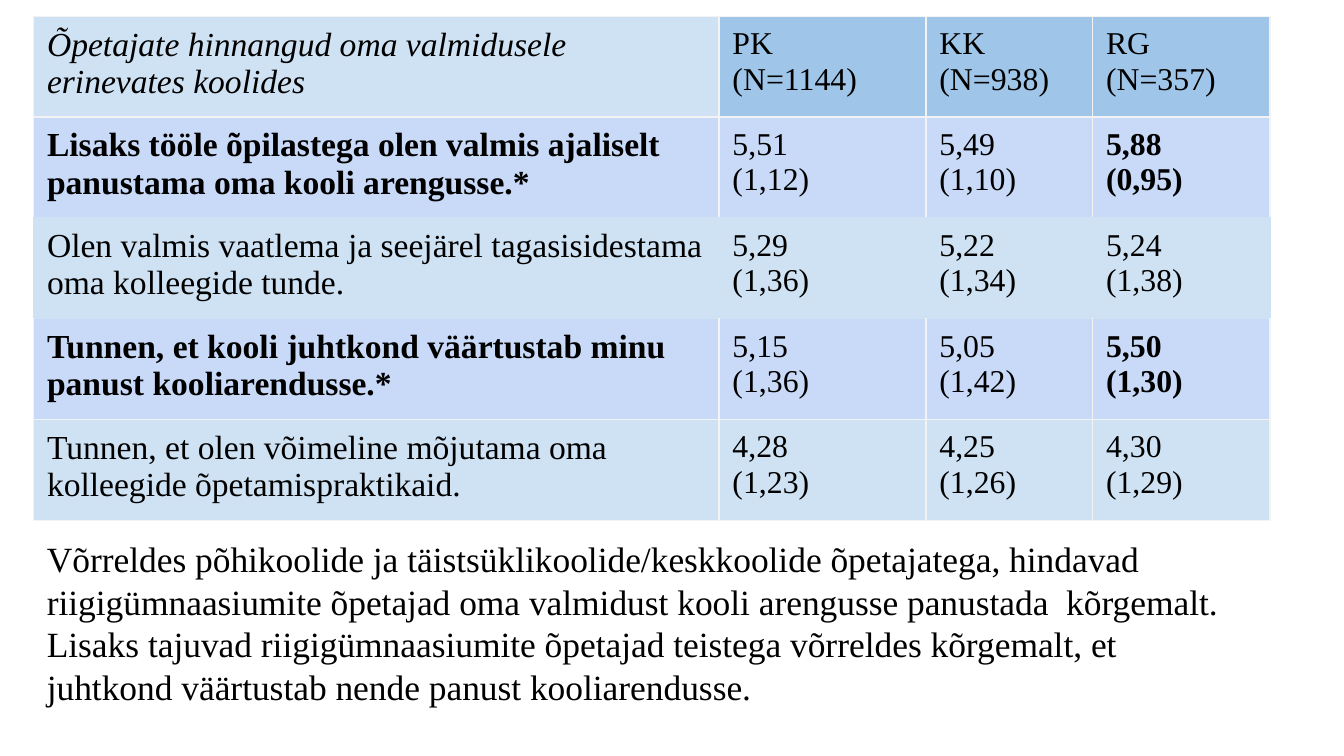
from dataclasses import dataclass

import pptx
import pptx.util
import pptx.dml.color
import pptx.oxml
import pptx.oxml.ns


@dataclass(frozen=True)
class Theme:
    """Colours, font and type sizes of the slide."""
    font: str = "Times New Roman"
    ink: str = "000000"
    paper: str = "FFFFFF"
    head: str = "9FC5E8"
    pale: str = "CFE2F3"
    strong: str = "C9DAF8"
    rule: str = "F3F3F3"
    label: float = 18
    value: float = 17
    note: float = 19


T = Theme()
WIDTH = 10
HEIGHT = WIDTH * 9 / 16
COLUMNS = (5.1, 1.54, 1.24, 1.32)
LINES = (0.43, 0.67, 0.67, 0.67, 0.67)
HEADER = ("Õpetajate hinnangud oma valmidusele erinevates koolides",
          "PK\n(N=1144)", "KK\n(N=938)", "RG\n(N=357)")
ROWS = (
    ("Lisaks tööle õpilastega olen valmis ajaliselt panustama oma kooli arengusse.*",
     "5,51\n(1,12)", "5,49\n(1,10)", "5,88\n(0,95)"),
    ("Olen valmis vaatlema ja seejärel tagasisidestama oma kolleegide tunde.",
     "5,29\n(1,36)", "5,22\n(1,34)", "5,24\n(1,38)"),
    ("Tunnen, et kooli juhtkond väärtustab minu panust kooliarendusse.*",
     "5,15\n(1,36)", "5,05\n(1,42)", "5,50\n(1,30)"),
    ("Tunnen, et olen võimeline mõjutama oma kolleegide õpetamispraktikaid.",
     "4,28\n(1,23)", "4,25\n(1,26)", "4,30\n(1,29)"),
)
NOTE = ("Võrreldes põhikoolide ja täistsüklikoolide/keskkoolide õpetajatega, "
        "hindavad riigigümnaasiumite õpetajad oma valmidust kooli arengusse "
        "panustada  kõrgemalt.\n"
        "Lisaks tajuvad riigigümnaasiumite õpetajad teistega võrreldes kõrgemalt, "
        "et juhtkond väärtustab nende panust kooliarendusse.")


def inches(*values):
    """Return the lengths in inches."""
    return [pptx.util.Inches(v) for v in values]


def paint(obj, color):
    """Fill a shape or cell with one colour."""
    obj.fill.solid()
    obj.fill.fore_color.rgb = pptx.dml.color.RGBColor.from_string(color)


def write(tf, text, size, bold=False, italic=False):
    """Write text into a frame, one paragraph for each line."""
    tf.word_wrap = True
    for i, line in enumerate(text.split("\n")):
        p = tf.add_paragraph() if i else tf.paragraphs[0]
        r = p.add_run()
        r.text = line
        r.font.name, r.font.size = T.font, pptx.util.Pt(size)
        r.font.bold, r.font.italic = bold, italic
        r.font.color.rgb = pptx.dml.color.RGBColor.from_string(T.ink)


def border(cell, **sides):
    """Draw the sides L, R, T and B of a cell in the given colours."""
    tc_pr = cell._tc.get_or_add_tcPr()
    for i, side in enumerate("LRTB"):
        tc_pr.insert(i, pptx.oxml.parse_xml(
            f'<a:ln{side} {pptx.oxml.ns.nsdecls("a")} w="{pptx.util.Pt(0.75)}"><a:solidFill>'
            f'<a:srgbClr val="{sides[side]}"/></a:solidFill></a:ln{side}>'))


def ratings_table(s, x, y, w, h):
    """Place the table of ratings by school type in the box."""
    data = (HEADER,) + ROWS
    tbl = s.shapes.add_table(len(data), len(COLUMNS), *inches(x, y, w, h)).table
    for col, share in zip(tbl.columns, COLUMNS):
        col.width = pptx.util.Inches(w * share / sum(COLUMNS))
    plain = 2
    for i, texts in enumerate(data):
        tbl.rows[i].height = pptx.util.Inches(h * LINES[i] / sum(LINES))
        starred = texts[0].endswith("*")
        side = T.pale if i == plain else T.rule
        top = T.pale if i in (plain, plain + 1) else T.rule
        bottom = T.pale if i in (plain - 1, plain) else T.rule
        for j, text in enumerate(texts):
            cell = tbl.cell(i, j)
            cell.margin_left = cell.margin_right = pptx.util.Inches(0.1)
            cell.margin_top = cell.margin_bottom = pptx.util.Pt(5.4)
            paint(cell, T.strong if starred else T.head if i == 0 and j else T.pale)
            border(cell, L=side, R=side, T=top, B=bottom)
            write(cell.text_frame, text, T.value if j else T.label,
                  bold=starred and j in (0, len(texts) - 1),
                  italic=i == 0 and j == 0)


def conclusion(s, x, y, w, h):
    """Place the concluding text in the box."""
    sp = s.shapes.add_textbox(*inches(x, y, w, h))
    paint(sp, T.paper)
    write(sp.text_frame, NOTE, T.note)


def main():
    """Build the slide and save it."""
    prs = pptx.Presentation()
    prs.slide_width, prs.slide_height = inches(WIDTH, HEIGHT)
    s = prs.slides.add_slide(prs.slide_layouts[6])
    left = WIDTH * 0.025
    conclusion(s, left, 3.95, 9.05, 1.43)
    ratings_table(s, left, 0.12, sum(COLUMNS), sum(LINES))
    prs.save("out.pptx")


if __name__ == "__main__":
    main()
